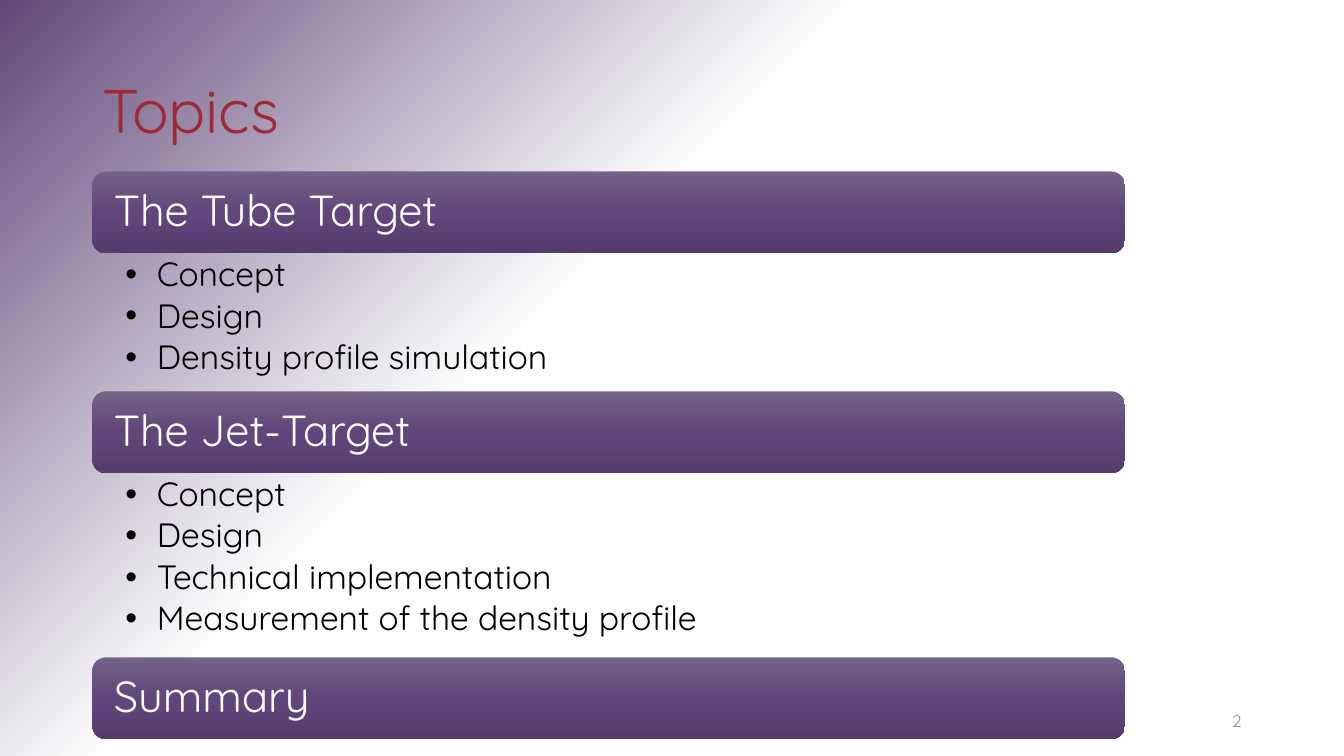
from copy import deepcopy
from dataclasses import dataclass

from lxml.etree import SubElement
from pptx import Presentation
from pptx.dml.color import RGBColor
from pptx.dml.fill import FillFormat
from pptx.enum.shapes import MSO_SHAPE as Shape
from pptx.enum.text import MSO_ANCHOR as Anchor, PP_ALIGN as Align
from pptx.oxml.ns import qn
from pptx.slide import Slide
from pptx.text.text import TextFrame, _Paragraph as Para
from pptx.util import Pt

FONT = "Quicksand"
LEFT, WIDTH = 66, 737.5
BAR_H = 58.5
FIRST_TOP = 122.5
INDENT = 22.5
BACK = [(0.59, "FFFFFF"), (1, "604878")]
BAR = [(0, "746388"), (0.5, "60467A"), (1, "553C6F")]


@dataclass
class Topic:
    name: str
    points: list[str]
    depth: float  # height of the list below the bar


TOPICS = [
    Topic("The Tube Target",
          ["Concept", "Design", "Density profile simulation"], 98.5),
    Topic("The Jet-Target",
          ["Concept", "Design", "Technical implementation",
           "Measurement of the density profile"], 131.5),
    Topic("Summary", [], 0),
]


def color(code: str) -> RGBColor:
    return RGBColor.from_string(code)


def shade(fill: FillFormat, root, angle: float,
          stops: list[tuple[float, str]]) -> None:
    """Give the fill inside root a gradient; angle runs counterclockwise."""
    fill.gradient()
    fill.gradient_angle = angle
    items = root.xpath(".//a:gsLst")[0]
    while len(items) < len(stops):
        items.append(deepcopy(items[0]))
    for stop, (place, code) in zip(fill.gradient_stops, stops):
        stop.position = place
        stop.color.rgb = color(code)


def style(para: Para, size: float, code: str, spacing: float = 0.9) -> None:
    para.line_spacing = spacing
    para.font.name = FONT
    para.font.size = Pt(size)
    para.font.color.rgb = color(code)


def inset(frame: TextFrame, left: float, top: float,
          right: float, bottom: float) -> None:
    frame.margin_left, frame.margin_top = Pt(left), Pt(top)
    frame.margin_right, frame.margin_bottom = Pt(right), Pt(bottom)


def box(slide: Slide, left: float, top: float, width: float, height: float,
        anchor: Anchor = Anchor.MIDDLE) -> TextFrame:
    frame = slide.shapes.add_textbox(
        Pt(left), Pt(top), Pt(width), Pt(height)).text_frame
    frame.word_wrap = True
    frame.vertical_anchor = anchor
    return frame


def add_bar(slide: Slide, top: float, name: str) -> None:
    bar = slide.shapes.add_shape(
        Shape.ROUNDED_RECTANGLE, Pt(LEFT), Pt(top), Pt(WIDTH), Pt(BAR_H))
    bar.shadow.inherit = False
    bar.line.fill.background()
    shade(bar.fill, bar.element, 270, BAR)
    frame = bar.text_frame
    frame.word_wrap = True
    frame.vertical_anchor = Anchor.MIDDLE
    inset(frame, 12.5, 12.5, 12.5, 12.5)
    para = frame.paragraphs[0]
    para.text = name
    para.alignment = Align.LEFT
    style(para, 31, "FFFFFF")


def add_list(slide: Slide, top: float, topic: Topic) -> None:
    frame = box(slide, LEFT, top, WIDTH, topic.depth, Anchor.TOP)
    inset(frame, 23.5, 3, 17.5, 3)
    for i, point in enumerate(topic.points):
        para = frame.add_paragraph() if i else frame.paragraphs[0]
        para.text = point
        para.level = 1
        para.space_after = Pt(3.7)
        props = para._p.get_or_add_pPr()
        props.set("marL", str(Pt(INDENT)))
        props.set("indent", str(Pt(-INDENT)))
        SubElement(props, qn("a:buFont"), typeface="Arial")
        SubElement(props, qn("a:buChar"), char="•")
        style(para, 24, "000000")


def main() -> None:
    deck = Presentation()
    deck.slide_width, deck.slide_height = Pt(960), Pt(540)
    slide = deck.slides.add_slide(deck.slide_layouts[6])
    shade(slide.background.fill, slide.element, 135, BACK)

    title = box(slide, LEFT, 28.75, 828, 104.4).paragraphs[0]
    title.text = "Topics"
    style(title, 44, "9F2936")

    number = box(slide, 678, 500.5, 216, 28.75).paragraphs[0]
    number.text = "2"
    number.alignment = Align.RIGHT
    style(number, 12, "8C8C8C", 1)

    top = FIRST_TOP
    for topic in TOPICS:
        add_bar(slide, top, topic.name)
        top += BAR_H
        if topic.points:
            add_list(slide, top, topic)
            top += topic.depth

    deck.save("out.pptx")


if __name__ == "__main__":
    main()
